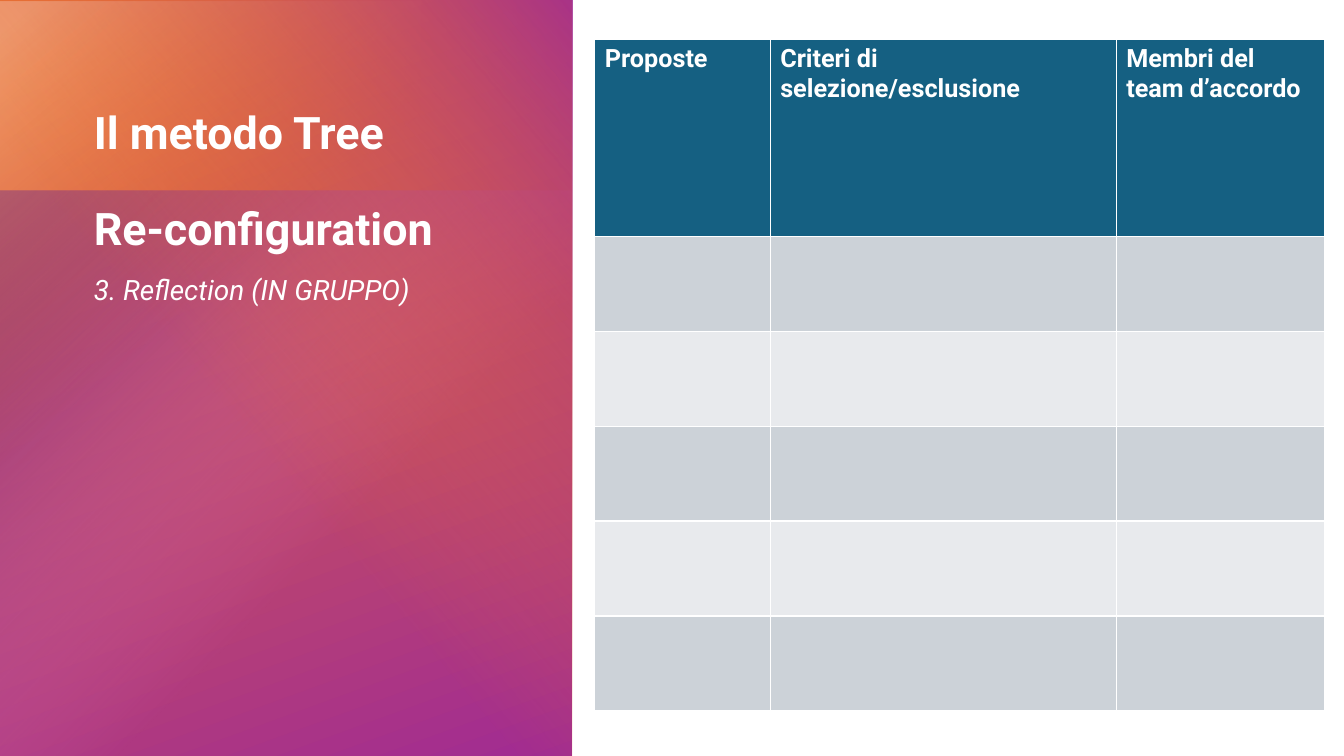
from lxml import etree
from pptx import Presentation
from pptx.dml.color import RGBColor
from pptx.enum.shapes import MSO_SHAPE
from pptx.enum.text import MSO_ANCHOR, MSO_AUTO_SIZE, PP_ALIGN
from pptx.oxml.ns import qn
from pptx.util import Cm, Pt

RECT = MSO_SHAPE.RECTANGLE
TOP, BOTTOM = MSO_ANCHOR.TOP, MSO_ANCHOR.BOTTOM
NO_FIT = MSO_AUTO_SIZE.NONE
LEFT = PP_ALIGN.LEFT
WHITE = "FFFFFF"


def rgb(value):
    return RGBColor.from_string(value)


def set_gradient(sp, stops, angle):
    sp.fill.background()
    no_fill = sp._element.spPr.find(qn("a:noFill"))
    grad = etree.Element(qn("a:gradFill"), rotWithShape="1")
    gs_lst = etree.SubElement(grad, qn("a:gsLst"))
    for pos, color, alpha in stops:
        gs = etree.SubElement(gs_lst, qn("a:gs"), pos=str(pos * 1000))
        clr = etree.SubElement(gs, qn("a:srgbClr"), val=color)
        if alpha < 100:
            etree.SubElement(clr, qn("a:alpha"), val=str(alpha * 1000))
    if angle is None:
        circle = etree.SubElement(grad, qn("a:path"), path="circle")
        etree.SubElement(circle, qn("a:fillToRect"), r="100000", b="100000")
    else:
        etree.SubElement(grad, qn("a:lin"), ang=str(angle * 60000), scaled="0")
    no_fill.getparent().replace(no_fill, grad)


prs = Presentation()
prs.slide_width, prs.slide_height = Cm(33.87), Cm(19.05)
s = prs.slides.add_slide(prs.slide_layouts[1])
title, body = s.placeholders

panels = [
    ((-0.05, 0, 14.45, 19.13), 0, [(7, "E97132", 100), (100, "A02B93", 100)], 70),
    ((-0.05, 4.8, 14.45, 14.3), 180, [(0, "78206E", 100), (60, "D86ECC", 0)], None),
    ((-0.05, 0.03, 10.64, 19.1), 0, [(3, "F2AA84", 78), (42, "E97132", 0)], 50),
    ((-2.34, 2.31, 19.1, 14.45), 270, [(0, "A02B93", 86), (57, "E97132", 0)], 230),
]
for box, rotation, stops, angle in panels:
    sp = s.shapes.add_shape(RECT, *map(Cm, box))
    sp.rotation = rotation
    sp.shadow.inherit = False
    sp.line.fill.background()
    set_gradient(sp, stops, angle)

texts = [
    (title, (2.11, 2.06, 10.29, 4.5), BOTTOM,
     ["Il metodo Tree", "Re-configuration"], 32, True, False, 34),
    (body, (2.11, 6.83, 10.29, 9.78), TOP,
     ["3. Reflection (IN GRUPPO)"], 20, False, True, 10),
]
for sp, box, anchor, lines, size, bold, italic, gap in texts:
    s.shapes._spTree.append(sp._element)
    sp.left, sp.top, sp.width, sp.height = map(Cm, box)
    tf = sp.text_frame
    tf.text = "\n".join(lines)
    tf.word_wrap = True
    tf.auto_size = NO_FIT
    tf.vertical_anchor = anchor
    for p in tf.paragraphs:
        p.alignment = LEFT
        p.line_spacing = 0.9
        p.space_before = Pt(gap)
        p.font.name = "Roboto"
        p.font.size = Pt(size)
        p.font.bold = bold
        p.font.italic = italic
        p.font.color.rgb = rgb(WHITE)
        pPr = p._p.get_or_add_pPr()
        pPr.set("marL", "0")
        pPr.set("indent", "0")
        pPr.insert_element_before(
            etree.Element(qn("a:buNone")), "a:tabLst", "a:defRPr", "a:extLst")

headers = ["Proposte", "Criteri di selezione/esclusione", "Membri del team d’accordo"]
widths = [4.42, 8.72, 5.26]
heights = [4.97] + [2.39] * 5
table = s.shapes.add_table(
    len(heights), len(widths), Cm(14.99), Cm(0.99),
    Cm(sum(widths)), Cm(sum(heights))).table
for col, width in zip(table.columns, widths):
    col.width = Cm(width)
for i, (row, height) in enumerate(zip(table.rows, heights)):
    row.height = Cm(height)
    color = "156082" if i == 0 else "CCD2D8" if i % 2 else "E8EAED"
    for cell in row.cells:
        cell.fill.solid()
        cell.fill.fore_color.rgb = rgb(color)
for cell, header in zip(table.rows[0].cells, headers):
    cell.text = header
    p = cell.text_frame.paragraphs[0]
    p.font.name = "Roboto"
    p.font.size = Pt(18)
    p.font.bold = True
    p.font.color.rgb = rgb(WHITE)

prs.save("out.pptx")
